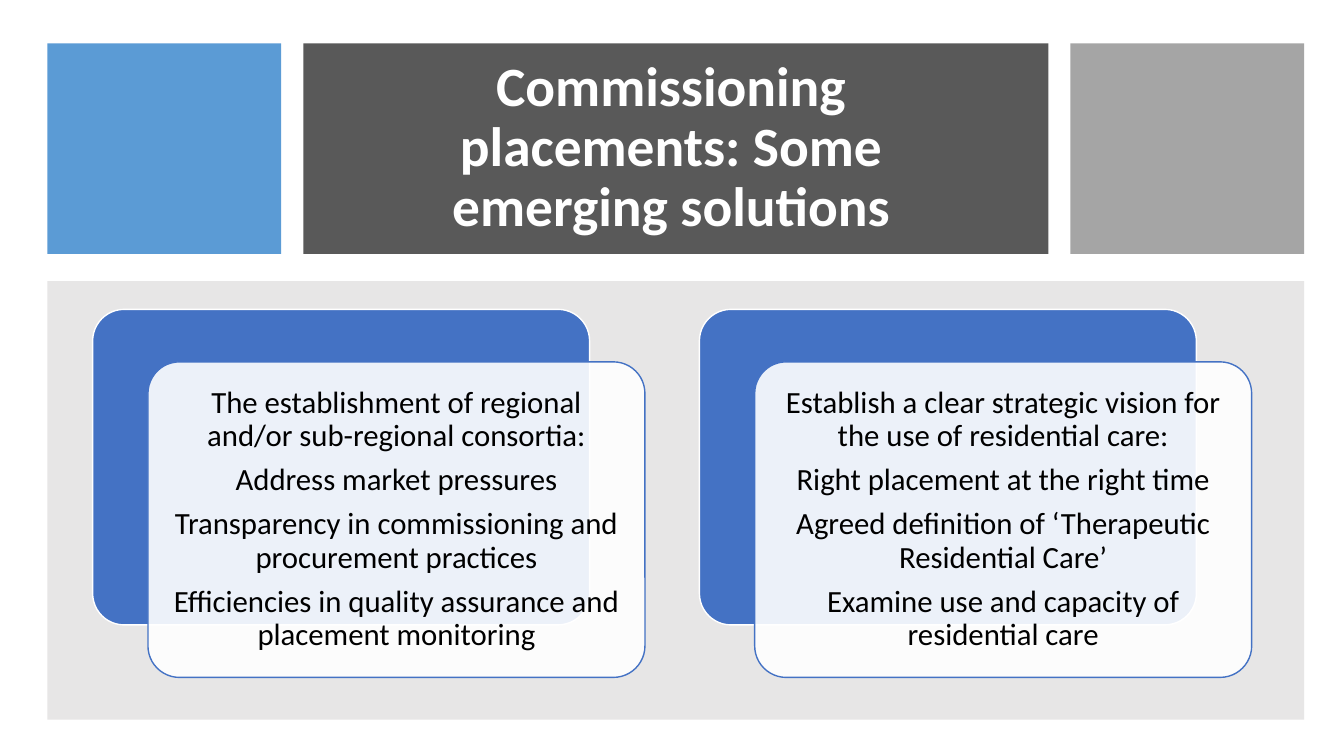
import pptx
import pptx.util
import pptx.oxml
import pptx.dml.color
import pptx.enum.shapes
import pptx.enum.text
from lxml import etree

Pt = pptx.util.Pt
RGB = pptx.dml.color.RGBColor
SHAPE = pptx.enum.shapes.MSO_SHAPE

# Content
TITLE = "Commissioning placements: Some emerging solutions"
SOLUTIONS = [
    ["The establishment of regional and/or sub-regional consortia:",
     "Address market pressures",
     "Transparency in commissioning and procurement practices",
     "Efficiencies in quality assurance and placement monitoring"],
    ["Establish a clear strategic vision for the use of residential care:",
     "Right placement at the right time",
     "Agreed definition of ‘Therapeutic Residential Care’",
     "Examine use and capacity of residential care"],
]

# Colours and font
WHITE = RGB(0xFF, 0xFF, 0xFF)
BLACK = RGB(0, 0, 0)
CHARCOAL = RGB(0x59, 0x59, 0x59)
SKY = RGB(0x5B, 0x9B, 0xD5)
GREY = RGB(0xA5, 0xA5, 0xA5)
PALE = RGB(0xE7, 0xE6, 0xE6)
BLUE = RGB(0x44, 0x72, 0xC4)
FONT = "Calibri"

# Layout, in points
LEFT, TOP, GAP = 33.9, 31, 15.8
HEADER_HEIGHT = 150.4
HEADER_BLOCKS = [(167, SKY), (532.1, CHARCOAL), (167, GREY)]
PANEL_TOP, PANEL_HEIGHT = 200.9, 313.2
CARD_LEFT, CARD_TOP, CARD_PITCH = 66.2, 221, 433.4
CARD_WIDTH, CARD_HEIGHT = 355, 225.4
CARD_SHIFT_X, CARD_SHIFT_Y = 39.5, 37.5
CARD_INSET = 6.6


def add_block(kind, left, top, width, height, fill, line=None):
    block = slide.shapes.add_shape(kind, Pt(left), Pt(top), Pt(width), Pt(height))
    block.shadow.inherit = False
    block.fill.solid()
    block.fill.fore_color.rgb = fill
    if line is None:
        block.line.fill.background()
    else:
        block.line.color.rgb = line
        block.line.width = Pt(1)
    if kind == SHAPE.ROUNDED_RECTANGLE:
        block.adjustments[0] = 0.1
    return block


def write(frame, lines, size, color, bold=False, after=0, inset=7.2):
    frame.word_wrap = True
    frame.auto_size = pptx.enum.text.MSO_AUTO_SIZE.NONE
    frame.vertical_anchor = pptx.enum.text.MSO_ANCHOR.MIDDLE
    frame.margin_left = frame.margin_right = Pt(inset)
    frame.margin_top = frame.margin_bottom = Pt(inset)
    for i, line in enumerate(lines):
        paragraph = frame.paragraphs[0] if i == 0 else frame.add_paragraph()
        paragraph.alignment = pptx.enum.text.PP_ALIGN.CENTER
        paragraph.line_spacing = 0.9
        paragraph.space_after = Pt(after)
        run = paragraph.add_run()
        run.text = line
        run.font.name = FONT
        run.font.size = Pt(size)
        run.font.bold = bold
        run.font.color.rgb = color


def set_opacity(block, percent):
    color = block.element.spPr.find(".//" + pptx.oxml.ns.qn("a:srgbClr"))
    alpha = etree.SubElement(color, pptx.oxml.ns.qn("a:alpha"))
    alpha.set("val", str(percent * 1000))


deck = pptx.Presentation()
deck.slide_width, deck.slide_height = Pt(960), Pt(540)
slide = deck.slides.add_slide(deck.slide_layouts[5])

# Header blocks and the panel beneath them
x = LEFT
for width, color in HEADER_BLOCKS:
    add_block(SHAPE.RECTANGLE, x, TOP, width, HEADER_HEIGHT, color)
    x += width + GAP
add_block(SHAPE.RECTANGLE, LEFT, PANEL_TOP, x - GAP - LEFT, PANEL_HEIGHT, PALE)

# Title, brought in front of its block
title = slide.shapes.title
title.left, title.top, title.width, title.height = Pt(254), Pt(54), Pt(450.7), Pt(104.4)
write(title.text_frame, [TITLE], size=39.6, color=WHITE, bold=True)
slide.shapes.element.append(title.element)

# Solution cards, each over a blue backing
for i, lines in enumerate(SOLUTIONS):
    left = CARD_LEFT + i * CARD_PITCH
    add_block(SHAPE.ROUNDED_RECTANGLE, left, CARD_TOP,
              CARD_WIDTH, CARD_HEIGHT, BLUE, line=WHITE)
    card = add_block(SHAPE.ROUNDED_RECTANGLE, left + CARD_SHIFT_X, CARD_TOP + CARD_SHIFT_Y,
                     CARD_WIDTH, CARD_HEIGHT, WHITE, line=BLUE)
    set_opacity(card, 90)
    write(card.text_frame, lines, size=22, color=BLACK, after=7.7, inset=CARD_INSET)

deck.save("out.pptx")
